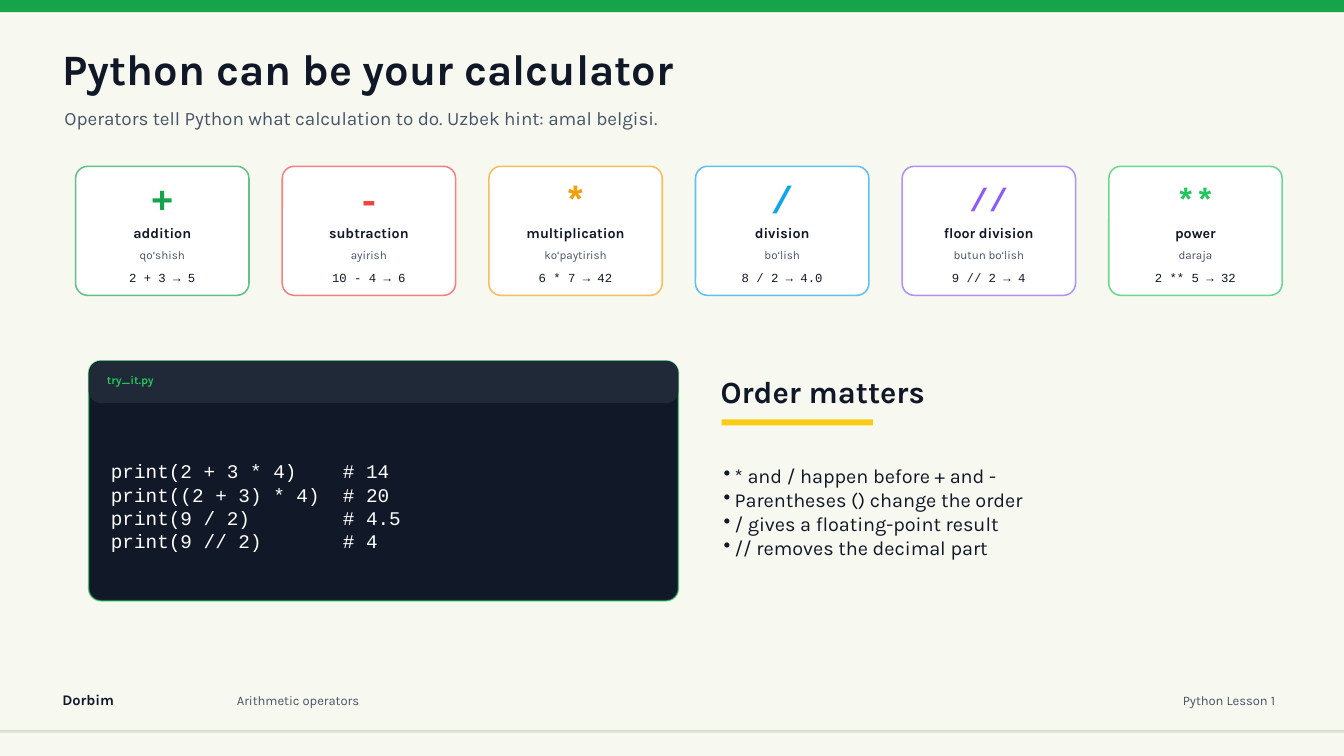
"""Build a lesson slide on Python's arithmetic operators."""
from dataclasses import dataclass

from lxml.etree import SubElement
from pptx import Presentation
from pptx.dml.color import RGBColor
from pptx.enum.shapes import MSO_SHAPE
from pptx.enum.text import MSO_ANCHOR, PP_ALIGN
from pptx.oxml.ns import qn
from pptx.util import Pt


@dataclass(frozen=True)
class Theme:
    sans: str = "Karla"
    mono: str = "Courier New"
    paper: str = "F7F8EF"
    rule: str = "D7E3D0"
    ink: str = "101828"
    muted: str = "475467"
    white: str = "FFFFFF"
    green: str = "16A34A"
    lime: str = "22C55E"
    red: str = "EF4444"
    amber: str = "F59E0B"
    blue: str = "0EA5E9"
    violet: str = "8B5CF6"
    yellow: str = "FACC15"
    editor: str = "111827"
    editor_bar: str = "1F2937"
    title_size: float = 31
    subtitle_size: float = 13.5
    symbol_size: float = 27
    double_symbol_size: float = 23
    name_size: float = 10.2
    hint_size: float = 8.3
    example_size: float = 8.8
    file_size: float = 8.2
    code_size: float = 13.8
    heading_size: float = 22
    list_size: float = 14.2
    brand_size: float = 10.5
    footer_size: float = 9.3


theme = Theme()
deck = Presentation()
deck.slide_width, deck.slide_height = Pt(960), Pt(540)
page = deck.slides.add_slide(deck.slide_layouts[6])
page.background.fill.solid()
page.background.fill.fore_color.rgb = RGBColor.from_string(theme.paper)


def add_text(text, *, at, size, color=theme.ink, font=theme.sans, bold=False,
             align=PP_ALIGN.LEFT, bullet_indent=None):
    """Add a text box with one paragraph per line of text."""
    frame = page.shapes.add_textbox(*map(Pt, at)).text_frame
    frame.word_wrap = True
    frame.vertical_anchor = MSO_ANCHOR.MIDDLE
    frame.margin_left = frame.margin_right = frame.margin_top = frame.margin_bottom = 0
    for index, line in enumerate(text.split("\n")):
        para = frame.add_paragraph() if index else frame.paragraphs[0]
        para.alignment = align
        if bullet_indent:
            properties = para._p.get_or_add_pPr()
            properties.set("marL", str(Pt(bullet_indent)))
            properties.set("indent", str(-Pt(bullet_indent)))
            SubElement(properties, qn("a:buChar"), char="•")
        span = para.add_run()
        span.text = line
        span.font.name = font
        span.font.size = Pt(size)
        span.font.bold = bold
        span.font.color.rgb = RGBColor.from_string(color)


def add_panel(at, fill, radius=None, outline=None, opacity=100):
    """Add a filled rectangle, rounded and outlined on request."""
    kind = MSO_SHAPE.ROUNDED_RECTANGLE if radius else MSO_SHAPE.RECTANGLE
    panel = page.shapes.add_shape(kind, *map(Pt, at))
    panel.shadow.inherit = False
    panel.fill.solid()
    panel.fill.fore_color.rgb = RGBColor.from_string(fill)
    if radius:
        panel.adjustments[0] = radius / min(at[2:])
    if outline:
        panel.line.width = Pt(1.1)
        panel.line.color.rgb = RGBColor.from_string(outline)
        color = panel.line.fill._xPr.find(f".//{qn('a:srgbClr')}")
        SubElement(color, qn("a:alpha"), val=str(opacity * 1000))
    else:
        panel.line.fill.background()


add_panel((0, 0, 960, 8.64), theme.green)
add_panel((0, 521.28, 960, 2.16), theme.rule)
add_text("Dorbim", at=(44.64, 491.76, 86.4, 15.84), size=theme.brand_size, bold=True)
add_text("Arithmetic operators", at=(169.2, 492.48, 468, 15.84),
         size=theme.footer_size, color=theme.muted)
add_text("Python Lesson 1", at=(777.6, 492.48, 133.2, 15.84),
         size=theme.footer_size, color=theme.muted, align=PP_ALIGN.RIGHT)

add_text("Python can be your calculator", at=(44.64, 30.24, 604.8, 37.44),
         size=theme.title_size, bold=True)
add_text("Operators tell Python what calculation to do. Uzbek hint: amal belgisi.",
         at=(46.08, 73.44, 763.2, 21.6), size=theme.subtitle_size, color=theme.muted)

operators = [
    ("+", "addition", "qo‘shish", "2 + 3 → 5", theme.green),
    ("-", "subtraction", "ayirish", "10 - 4 → 6", theme.red),
    ("*", "multiplication", "ko‘paytirish", "6 * 7 → 42", theme.amber),
    ("/", "division", "bo‘lish", "8 / 2 → 4.0", theme.blue),
    ("//", "floor division", "butun bo‘lish", "9 // 2 → 4", theme.violet),
    ("**", "power", "daraja", "2 ** 5 → 32", theme.lime),
]
card_width, card_pitch, card_padding = 123.84, 147.6, 5.76
label_width = card_width - 2 * card_padding
for column, (symbol, name, hint, example, accent) in enumerate(operators):
    left = 54 + column * card_pitch
    label_left = left + card_padding
    add_panel((left, 118.8, card_width, 92.16), theme.white,
              radius=8.64, outline=accent, opacity=65)
    add_text(symbol, at=(left, 128.88, card_width, 25.92), color=accent,
             size=theme.symbol_size if len(symbol) == 1 else theme.double_symbol_size,
             font=theme.mono, bold=True, align=PP_ALIGN.CENTER)
    add_text(name, at=(label_left, 159.84, label_width, 12.96),
             size=theme.name_size, bold=True, align=PP_ALIGN.CENTER)
    add_text(hint, at=(label_left, 176.4, label_width, 10.8),
             size=theme.hint_size, color=theme.muted, align=PP_ALIGN.CENTER)
    add_text(example, at=(label_left, 192.96, label_width, 10.08),
             size=theme.example_size, font=theme.mono, align=PP_ALIGN.CENTER)

add_panel((63.36, 257.76, 421.2, 171.36), theme.editor,
          radius=8.64, outline=theme.lime, opacity=60)
add_panel((63.36, 257.76, 421.2, 30.24), theme.editor_bar, radius=8.64)
add_text("try_it.py", at=(76.32, 266.4, 395.28, 10.08),
         size=theme.file_size, color=theme.lime, bold=True)
code = """print(2 + 3 * 4)    # 14
print((2 + 3) * 4)  # 20
print(9 / 2)        # 4.5
print(9 // 2)       # 4"""
add_text(code, at=(79.2, 300.96, 389.52, 120.96),
         size=theme.code_size, color=theme.white, font=theme.mono)

add_text("Order matters", at=(514.8, 266.4, 244.8, 25.92),
         size=theme.heading_size, bold=True)
add_panel((515.52, 299.52, 108, 4.32), theme.yellow)
rules = """* and / happen before + and -
Parentheses () change the order
/ gives a floating-point result
// removes the decimal part"""
add_text(rules, at=(516.96, 320.4, 370.8, 90),
         size=theme.list_size, bullet_indent=7.8)

deck.save("out.pptx")
